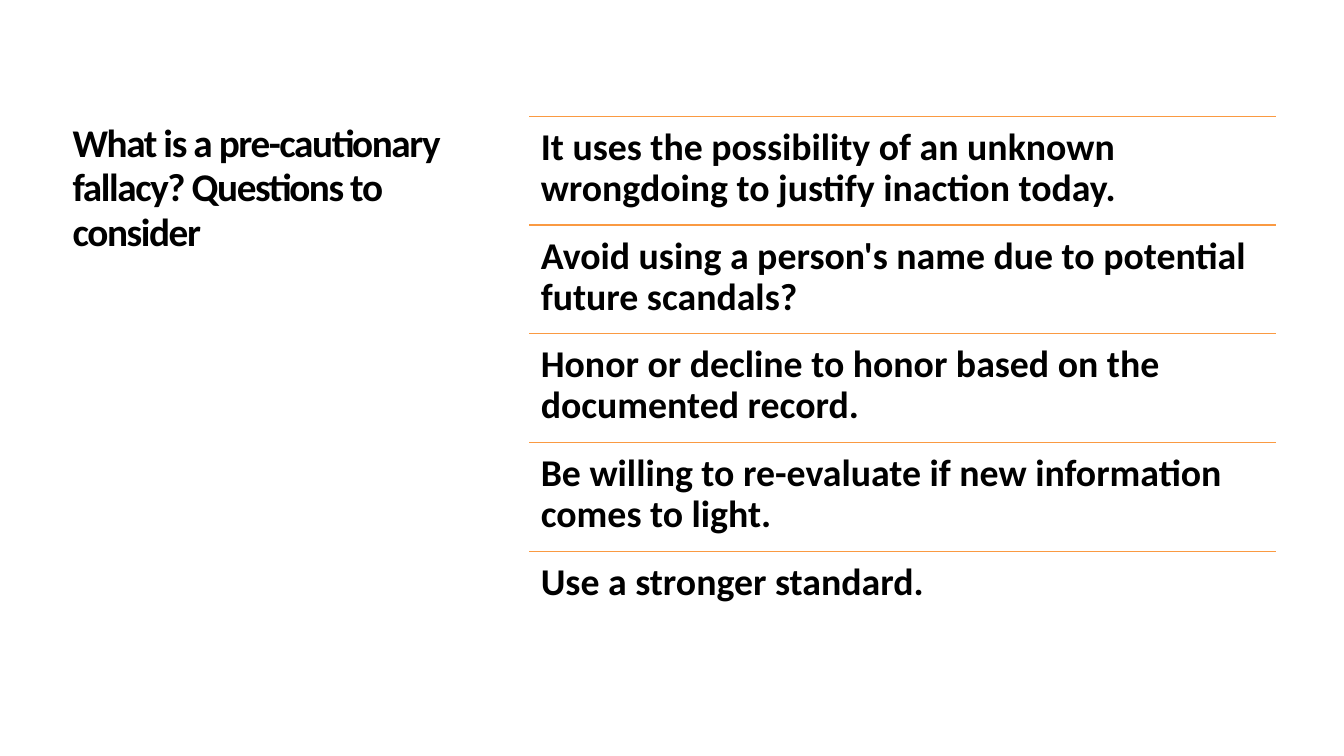
from dataclasses import dataclass

from lxml.etree import SubElement
from pptx import Presentation
from pptx.dml.color import RGBColor
from pptx.enum.shapes import MSO_CONNECTOR
from pptx.enum.text import MSO_ANCHOR, MSO_AUTO_SIZE, PP_ALIGN
from pptx.oxml.ns import qn
from pptx.util import Cm, Pt


@dataclass(frozen=True)
class Theme:
    """Colours, font and type sizes of the slide."""
    text: RGBColor = RGBColor(0x00, 0x00, 0x00)
    rule: RGBColor = RGBColor(0xFA, 0x9A, 0x42)
    font: str = "Calibri"
    title_size: Pt = Pt(28)
    point_size: Pt = Pt(27)
    rule_width: Pt = Pt(1)


THEME = Theme()
TITLE = "What is a pre-cautionary fallacy? Questions to consider"
POINTS = [
    "It uses the possibility of an unknown wrongdoing to justify inaction today.",
    "Avoid using a person's name due to potential future scandals?",
    "Honor or decline to honor based on the documented record.",
    "Be willing to re-evaluate if new information comes to light.",
    "Use a stronger standard.",
]
TOP = Cm(2.93)
LIST_LEFT = Cm(13.34)
LIST_WIDTH = Cm(18.82)
ROW_PITCH = Cm(2.74)
ROW_HEIGHT = Cm(2.72)
LAST_ROW_HEIGHT = Cm(1.7)


def write_text(shape, text, size, inset, line_spacing):
    """Put one bold, top-left paragraph in a shape and return it."""
    frame = shape.text_frame
    frame.text = text
    frame.word_wrap = True
    frame.vertical_anchor = MSO_ANCHOR.TOP
    frame.margin_left = frame.margin_right = inset
    frame.margin_top = frame.margin_bottom = inset
    paragraph = frame.paragraphs[0]
    paragraph.alignment = PP_ALIGN.LEFT
    paragraph.line_spacing = line_spacing
    font = paragraph.runs[0].font
    font.name, font.size, font.bold = THEME.font, size, True
    font.color.rgb = THEME.text
    return paragraph


def place_title(slide, text):
    """Move the title placeholder to the left column and format it."""
    title = slide.shapes.title
    title.left, title.top = Cm(1.7), TOP
    title.width, title.height = Cm(9.7), Cm(13.72)
    paragraph = write_text(title, text, THEME.title_size, Cm(0.13), 0.95)
    title.text_frame.auto_size = MSO_AUTO_SIZE.NONE
    paragraph.runs[0].font._element.set("spc", "-100")


def add_rule(slide, top):
    """Draw the thin line above a point."""
    rule = slide.shapes.add_connector(
        MSO_CONNECTOR.STRAIGHT, LIST_LEFT, top, LIST_LEFT + LIST_WIDTH, top)
    rule.line.color.rgb = THEME.rule
    rule.line.width = THEME.rule_width
    SubElement(rule._element.spPr, qn("a:effectLst"))


def add_point(slide, text, top, height):
    """Add one point with its rule."""
    add_rule(slide, top)
    box = slide.shapes.add_textbox(LIST_LEFT, top, LIST_WIDTH, height)
    paragraph = write_text(box, text, THEME.point_size, Cm(0.29), 0.9)
    paragraph.space_before = Pt(11)
    box.text_frame.auto_size = MSO_AUTO_SIZE.SHAPE_TO_FIT_TEXT


def main():
    """Build the slide and save it."""
    presentation = Presentation()
    presentation.slide_width, presentation.slide_height = Cm(33.87), Cm(19.05)
    slide = presentation.slides.add_slide(presentation.slide_layouts[5])
    place_title(slide, TITLE)
    for index, text in enumerate(POINTS):
        height = LAST_ROW_HEIGHT if text == POINTS[-1] else ROW_HEIGHT
        add_point(slide, text, TOP + index * ROW_PITCH, height)
    presentation.save("out.pptx")


if __name__ == "__main__":
    main()
